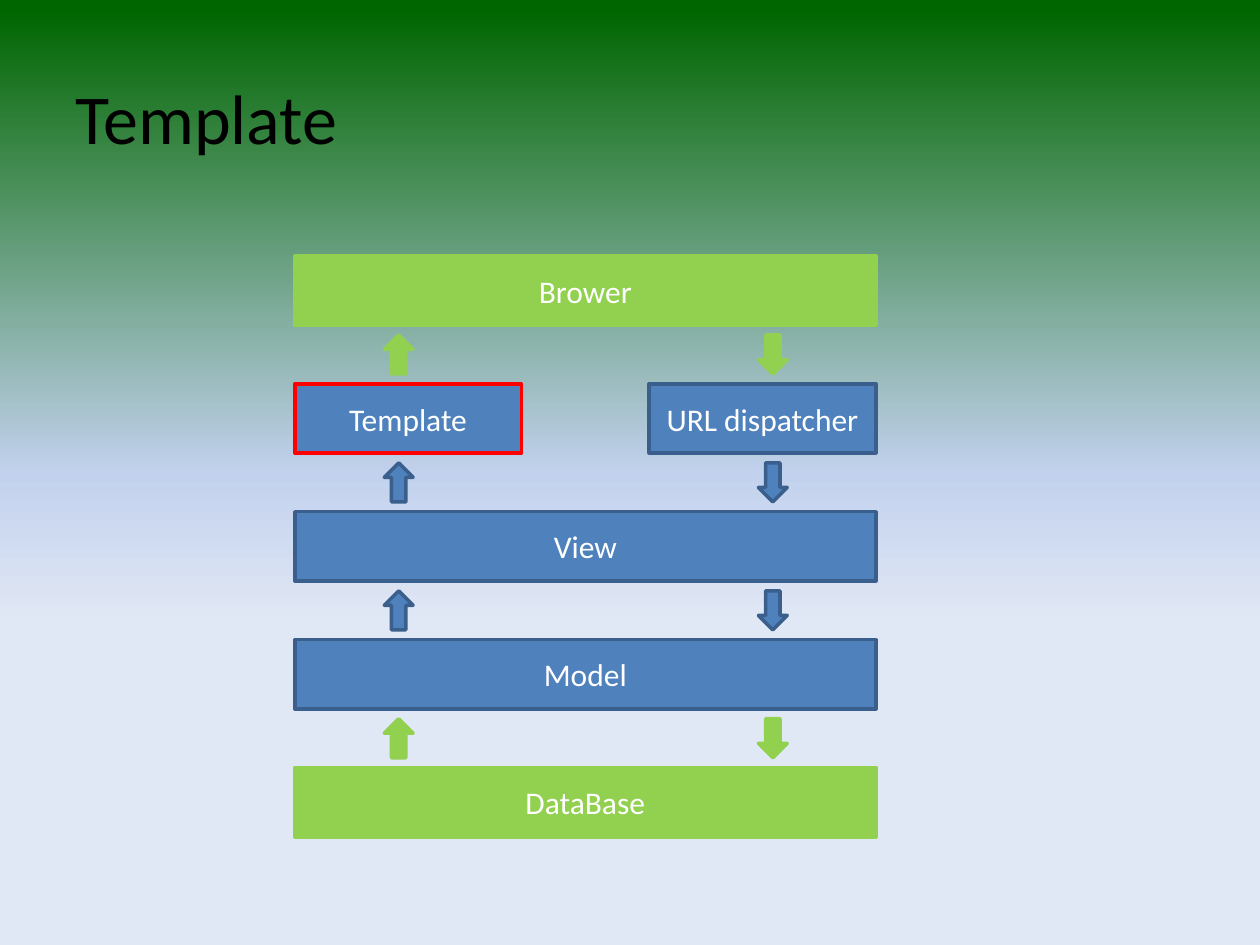
"""Build the slide that shows how a request passes through the web layers."""
from copy import deepcopy

from pptx import Presentation
from pptx.dml.color import RGBColor as Rgb
from pptx.enum.shapes import MSO_SHAPE as Kind
from pptx.enum.text import MSO_ANCHOR as Anchor, PP_ALIGN as Align
from pptx.oxml.ns import qn
from pptx.util import Pt

HUES = {
    "green": "92D050", "blue": "4F81BD", "navy": "3A5F8C", "red": "FF0000",
    "white": "FFFFFF", "black": "000000",
    "top": "006600", "mid": "C2D1ED", "base": "E1E8F5",
}
LEFT, WIDE, HALF, HIGH = 168.5, 332, 129.5, 39.6
TOP, STEP = 146.2, 73.1
UP_X, DOWN_X = 219.6, 433.4


def hue(name):
    return Rgb.from_string(HUES[name])


def style(font, size, name):
    font.name = "Calibri"
    font.size = Pt(size)
    font.color.rgb = hue(name)


def add_back(slide):
    fill = slide.background.fill
    fill.gradient()
    fill.gradient_angle = 270
    stops = slide.element.find(".//" + qn("a:gsLst"))
    stops.append(deepcopy(stops[-1]))
    marks = [("top", 0.01), ("mid", 0.5), ("base", 0.66)]
    for stop, (name, place) in zip(fill.gradient_stops, marks):
        stop.color.rgb = hue(name)
        stop.position = place


def add_title(slide, text):
    title = slide.shapes.title
    title.left, title.top, title.width, title.height = (
        Pt(n) for n in (36, 21.6, 648, 90))
    frame = title.text_frame
    frame.text = text
    frame.vertical_anchor = Anchor.MIDDLE
    line = frame.paragraphs[0]
    line.alignment = Align.LEFT
    style(line.font, 40, "black")


def add_form(slide, kind, x, y, wide, high, fill, edge):
    form = slide.shapes.add_shape(kind, Pt(x), Pt(y), Pt(wide), Pt(high))
    form.shadow.inherit = False
    form.fill.solid()
    form.fill.fore_color.rgb = hue(fill)
    form.line.color.rgb = hue(edge)
    form.line.width = Pt(2)
    return form


def add_box(slide, text, row, fill, edge, x=LEFT, wide=WIDE):
    box = add_form(slide, Kind.RECTANGLE, x, TOP + row * STEP, wide, HIGH, fill, edge)
    frame = box.text_frame
    frame.text = text
    frame.vertical_anchor = Anchor.MIDDLE
    line = frame.paragraphs[0]
    line.alignment = Align.CENTER
    style(line.font, 18, "white")


def add_pair(slide, row, fill, edge):
    y = TOP + row * STEP + 45.2
    for kind, x in ((Kind.UP_ARROW, UP_X), (Kind.DOWN_ARROW, DOWN_X)):
        add_form(slide, kind, x, y, 16.5, 22.3, fill, edge)


def main():
    deck = Presentation()
    deck.slide_width, deck.slide_height = Pt(720), Pt(540)
    slide = deck.slides.add_slide(deck.slide_layouts[5])
    add_back(slide)
    add_title(slide, "Template")

    outer, inner = ("green", "green"), ("blue", "navy")
    add_box(slide, "Brower", 0, *outer)
    add_box(slide, "Template", 1, "blue", "red", wide=HALF)
    add_box(slide, "URL dispatcher", 1, *inner, x=LEFT + WIDE - HALF, wide=HALF)
    add_box(slide, "View", 2, *inner)
    add_box(slide, "Model", 3, *inner)
    add_box(slide, "DataBase", 4, *outer)
    for row, tone in enumerate((outer, inner, inner, outer)):
        add_pair(slide, row, *tone)
    deck.save("out.pptx")


if __name__ == "__main__":
    main()
